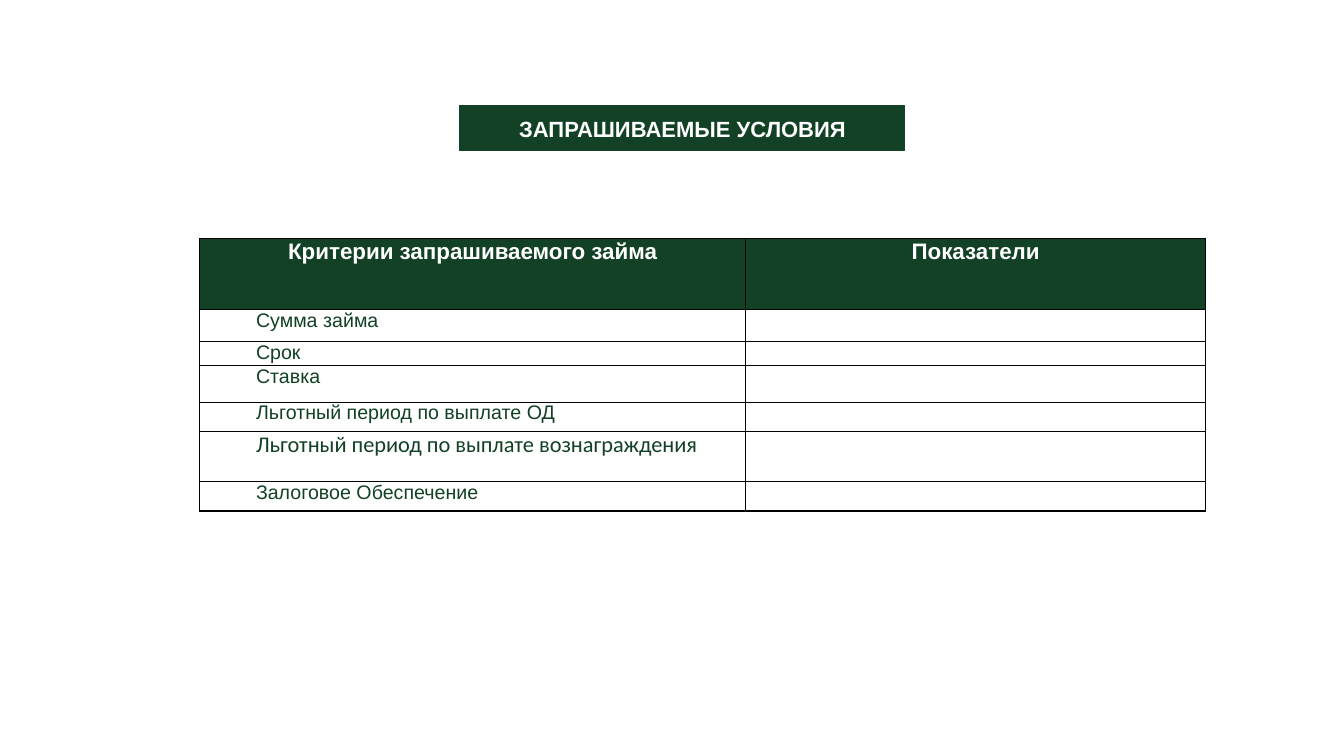
from dataclasses import dataclass

from lxml import etree
from pptx import Presentation
from pptx.dml.color import RGBColor
from pptx.enum.shapes import MSO_SHAPE
from pptx.enum.text import MSO_ANCHOR, PP_ALIGN
from pptx.oxml.ns import qn
from pptx.slide import Slide
from pptx.table import _Cell
from pptx.text.text import TextFrame
from pptx.util import Emu, Inches, Pt

RECTANGLE = MSO_SHAPE.RECTANGLE
MIDDLE = MSO_ANCHOR.MIDDLE
LEFT, CENTER, JUSTIFY = PP_ALIGN.LEFT, PP_ALIGN.CENTER, PP_ALIGN.JUSTIFY

GREEN = RGBColor(0x12, 0x41, 0x26)
WHITE = RGBColor(0xFF, 0xFF, 0xFF)
BLACK = RGBColor(0x00, 0x00, 0x00)

SLIDE_WIDTH, SLIDE_HEIGHT = Inches(13.3333), Inches(7.5)
GRID_COLUMNS, GRID_ROWS = 160, 90
LABEL_INDENT = Inches(0.49)
CELL_PADDING = Inches(0.07)


@dataclass(frozen=True)
class Area:
    left: float
    top: float
    width: float
    height: float

    def emu(self) -> tuple[Emu, Emu, Emu, Emu]:
        return columns(self.left), rows(self.top), columns(self.width), rows(self.height)


@dataclass(frozen=True)
class Criterion:
    label: str
    height: float
    size: float = 14
    font: str = "Arial"
    align: PP_ALIGN = JUSTIFY


BANNER = Area(54.72, 12.6, 52.92, 5.28)
HEADING = Area(61.8, 13.56, 47.28, 3.36)
TABLE_LEFT, TABLE_TOP = 23.76, 28.44
HEADER_HEIGHT = 8.4
COLUMN_WIDTHS = (65.04, 54.72)
HEADERS = ("Критерии запрашиваемого займа", "Показатели")
CRITERIA = (
    Criterion("Сумма займа", 3.84),
    Criterion("Срок", 2.88),
    Criterion("Ставка", 4.32),
    Criterion("Льготный период по выплате ОД", 3.48),
    Criterion("Льготный период по выплате вознаграждения", 6, 16, "Calibri", LEFT),
    Criterion("Залоговое Обеспечение", 3.48),
)


def columns(count: float) -> Emu:
    return Emu(round(SLIDE_WIDTH * count / GRID_COLUMNS))


def rows(count: float) -> Emu:
    return Emu(round(SLIDE_HEIGHT * count / GRID_ROWS))


def write_text(frame: TextFrame, text: str, *, size: float, color: RGBColor,
               font: str = "Arial", bold: bool = False,
               align: PP_ALIGN = LEFT, indent: int = 0) -> None:
    paragraph = frame.paragraphs[0]
    paragraph.alignment = align
    properties = paragraph._p.get_or_add_pPr()
    properties.set("marL", "0")
    properties.set("indent", str(int(indent)))
    run = paragraph.add_run()
    run.text = text
    run.font.name = font
    run.font.size = Pt(size)
    run.font.bold = bold
    run.font.color.rgb = color


def add_banner(slide: Slide) -> None:
    banner = slide.shapes.add_shape(RECTANGLE, *BANNER.emu())
    banner.shadow.inherit = False
    banner.fill.solid()
    banner.fill.fore_color.rgb = GREEN
    banner.line.color.rgb = GREEN
    banner.line.width = Pt(0.75)

    heading = slide.shapes.add_textbox(*HEADING.emu()).text_frame
    heading.word_wrap = True
    heading.vertical_anchor = MIDDLE
    heading.margin_left = heading.margin_right = heading.margin_bottom = 0
    heading.margin_top = Inches(0.02)
    write_text(heading, "ЗАПРАШИВАЕМЫЕ УСЛОВИЯ", size=15.7, color=WHITE, bold=True)


def style_cell(cell: _Cell, fill: RGBColor | None = None) -> None:
    cell.margin_left = cell.margin_right = CELL_PADDING
    cell.margin_top = cell.margin_bottom = 0
    properties = cell._tc.get_or_add_tcPr()
    for side in ("lnL", "lnR", "lnT", "lnB"):
        border = etree.SubElement(properties, qn(f"a:{side}"), w=str(int(Pt(1))))
        stroke = etree.SubElement(border, qn("a:solidFill"))
        etree.SubElement(stroke, qn("a:srgbClr"), val=str(BLACK))
    if fill is None:
        cell.fill.background()
    else:
        cell.fill.solid()
        cell.fill.fore_color.rgb = fill


def add_terms_table(slide: Slide) -> None:
    heights = (HEADER_HEIGHT, *(criterion.height for criterion in CRITERIA))
    area = Area(TABLE_LEFT, TABLE_TOP, sum(COLUMN_WIDTHS), sum(heights))
    terms = slide.shapes.add_table(len(heights), len(COLUMN_WIDTHS), *area.emu()).table
    terms.first_row = terms.horz_banding = False
    for column, width in zip(terms.columns, COLUMN_WIDTHS):
        column.width = columns(width)
    for row, height in zip(terms.rows, heights):
        row.height = rows(height)

    for index, header in enumerate(HEADERS):
        cell = terms.cell(0, index)
        style_cell(cell, GREEN)
        write_text(cell.text_frame, header, size=16, color=WHITE, bold=True, align=CENTER)

    for index, criterion in enumerate(CRITERIA, start=1):
        label, value = terms.cell(index, 0), terms.cell(index, 1)
        style_cell(label)
        write_text(label.text_frame, criterion.label, size=criterion.size, color=GREEN,
                   font=criterion.font, align=criterion.align, indent=LABEL_INDENT)
        style_cell(value)
        blank = value.text_frame.paragraphs[0]._p
        etree.SubElement(blank, qn("a:endParaRPr"), sz="1200")


def main() -> None:
    presentation = Presentation()
    presentation.slide_width = SLIDE_WIDTH
    presentation.slide_height = SLIDE_HEIGHT
    slide = presentation.slides.add_slide(presentation.slide_layouts[6])
    add_banner(slide)
    add_terms_table(slide)
    presentation.save("out.pptx")


if __name__ == "__main__":
    main()
